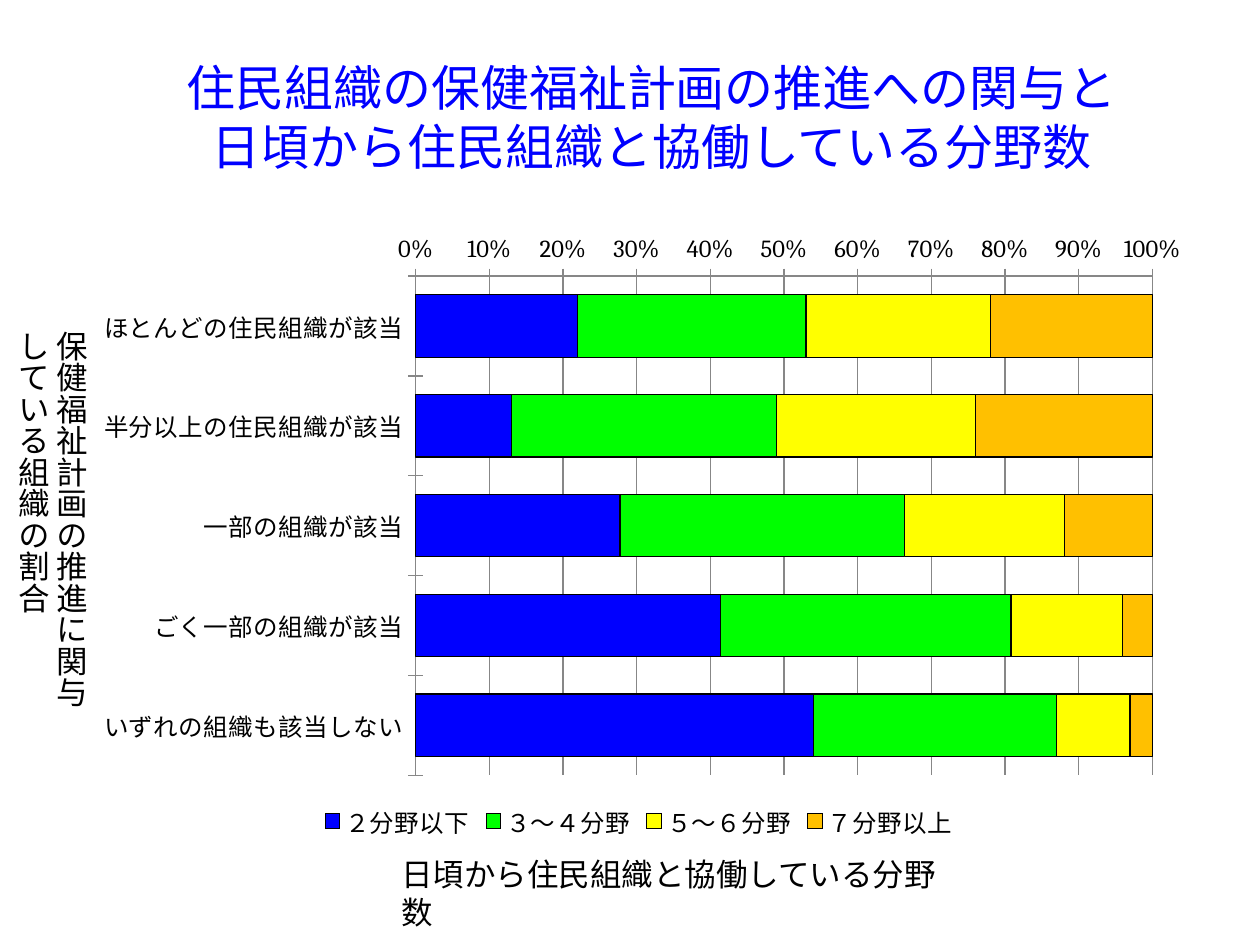
from dataclasses import dataclass

from lxml import etree
from pptx import Presentation
from pptx import util as u
from pptx.chart import data as chart_data
from pptx.dml.color import RGBColor
from pptx.enum import chart as ce, text
from pptx.oxml import ns

EMU_PER_PX = 914400 / 126
COLORS = {"blue": "0000FF", "green": "00FF00", "yellow": "FFFF00",
          "orange": "FFC000", "black": "000000", "gray": "878787"}
CATEGORIES = ["ほとんどの住民組織が該当", "半分以上の住民組織が該当",
              "一部の組織が該当", "ごく一部の組織が該当", "いずれの組織も該当しない"]
PLOT_AREA = {"x": 0.3, "y": 0.09, "w": 0.66, "h": 0.8}


@dataclass
class Box:
    left: int
    top: int
    width: int
    height: int

    def emu(self) -> list[int]:
        return [px(v) for v in (self.left, self.top, self.width, self.height)]


@dataclass
class FieldSeries:
    name: str
    percents: list[int]
    color: str


@dataclass
class AxisLabel:
    box: Box
    lines: list[str]
    vertical: bool


SERIES = [
    FieldSeries("２分野以下", [22, 13, 28, 41, 54], "blue"),
    FieldSeries("３～４分野", [31, 36, 39, 39, 33], "green"),
    FieldSeries("５～６分野", [25, 27, 22, 15, 10], "yellow"),
    FieldSeries("７分野以上", [22, 24, 12, 4, 3], "orange"),
]
LABELS = [
    AxisLabel(Box(389, 849, 567, 50), ["日頃から住民組織と協働している分野数"], False),
    AxisLabel(Box(-6, 318, 102, 388),
              ["保健福祉計画の推進に関与", "している組織の割合"], True),
]


def px(value: int) -> int:
    return round(value * EMU_PER_PX)


def rgb(name: str) -> RGBColor:
    return RGBColor.from_string(COLORS[name])


def set_all(target, **values) -> None:
    for name, value in values.items():
        setattr(target, name, value)


def format_font(font, size: int, color: str, name: str = "Calibri") -> None:
    set_all(font, size=u.Pt(size), name=name, bold=False)
    font.color.rgb = rgb(color)


def format_line(line, color: str) -> None:
    line.color.rgb = rgb(color)
    line.width = u.Pt(0.75)


def add_title(page) -> None:
    title = page.shapes.title
    left, top, width, height = Box(63, 38, 1177, 157).emu()
    set_all(title, left=left, top=top, width=width, height=height)
    frame = title.text_frame
    frame.text = "住民組織の保健福祉計画の推進への関与と\v日頃から住民組織と協働している分野数"
    set_all(frame, vertical_anchor=text.MSO_ANCHOR.MIDDLE,
            auto_size=text.MSO_AUTO_SIZE.NONE)
    para = frame.paragraphs[0]
    para.alignment = text.PP_ALIGN.CENTER
    for span in para.runs:
        format_font(span.font, 28, "blue")


def place_plot(chart) -> None:
    """Fix the inner plot area as fractions of the chart."""
    plot_area = chart.plots[0]._element.getparent()
    for old in plot_area.findall(ns.qn("c:layout")):
        plot_area.remove(old)
    layout = etree.Element(ns.qn("c:layout"))
    manual = etree.SubElement(layout, ns.qn("c:manualLayout"))
    settings = {"layoutTarget": "inner", "xMode": "edge", "yMode": "edge", **PLOT_AREA}
    for tag, value in settings.items():
        etree.SubElement(manual, ns.qn(f"c:{tag}"), val=str(value))
    plot_area.insert(0, layout)


def add_field_chart(page) -> None:
    table = chart_data.CategoryChartData(number_format="0")
    table.categories = CATEGORIES
    for item in SERIES:
        table.add_series(item.name, item.percents)
    chart = page.shapes.add_chart(ce.XL_CHART_TYPE.BAR_STACKED_100,
                                  *Box(81, 220, 1116, 624).emu(), table).chart
    format_font(chart.font, 14, "black")
    chart.has_title = False
    chart.has_legend = True
    set_all(chart.legend, position=ce.XL_LEGEND_POSITION.BOTTOM, include_in_layout=False)

    # Bars
    plot = chart.plots[0]
    set_all(plot, gap_width=60, overlap=100, vary_by_categories=False)
    for item, series in zip(SERIES, plot.series):
        series.format.fill.solid()
        series.format.fill.fore_color.rgb = rgb(item.color)
        format_line(series.format.line, "black")

    # Axes
    for axis, font_name in ((chart.category_axis, "Calibri"), (chart.value_axis, "Cambria")):
        axis.major_tick_mark = ce.XL_TICK_MARK.CROSS
        format_line(axis.format.line, "gray")
        format_font(axis.tick_labels.font, 14, "black", font_name)
    chart.category_axis.reverse_order = True
    set_all(chart.value_axis, minimum_scale=0, maximum_scale=1, major_unit=0.1,
            has_major_gridlines=True)
    set_all(chart.value_axis.tick_labels, number_format="0%", number_format_is_linked=False)
    format_line(chart.value_axis.major_gridlines.format.line, "gray")
    place_plot(chart)


def add_axis_label(page, label: AxisLabel) -> None:
    frame = page.shapes.add_textbox(*label.box.emu()).text_frame
    set_all(frame, word_wrap=not label.vertical,
            auto_size=text.MSO_AUTO_SIZE.SHAPE_TO_FIT_TEXT)
    if label.vertical:
        frame._txBody.bodyPr.set("vert", "eaVert")
    frame.text = "\n".join(label.lines)
    for para in frame.paragraphs:
        format_font(para.runs[0].font, 18, "black")


def main() -> None:
    deck = Presentation()
    set_all(deck, slide_width=px(1260), slide_height=px(945))
    page = deck.slides.add_slide(deck.slide_layouts[5])
    add_title(page)
    add_field_chart(page)
    for label in LABELS:
        add_axis_label(page, label)
    deck.save("out.pptx")


if __name__ == "__main__":
    main()
